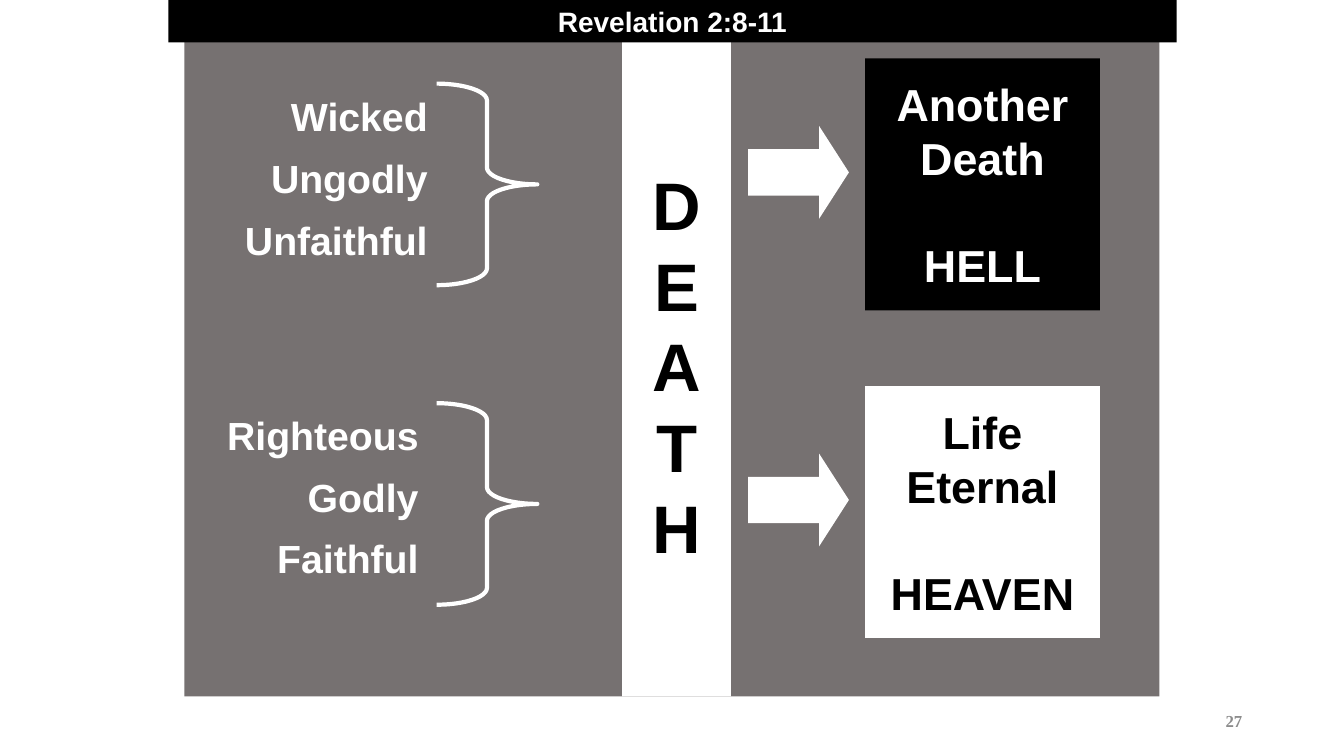
from pptx import Presentation
from pptx.dml.color import RGBColor
from pptx.enum.shapes import MSO_SHAPE
from pptx.enum.text import MSO_ANCHOR, PP_ALIGN
from pptx.util import Inches, Pt

RECTANGLE = MSO_SHAPE.RECTANGLE
BRACE = MSO_SHAPE.RIGHT_BRACE
ARROW = MSO_SHAPE.RIGHT_ARROW
TOP, MIDDLE = MSO_ANCHOR.TOP, MSO_ANCHOR.MIDDLE
CENTER, RIGHT = PP_ALIGN.CENTER, PP_ALIGN.RIGHT
BLACK, WHITE, GRAY, NUMBER_GRAY = "000000", "FFFFFF", "767171", "8C8C8C"


def color(value):
    return RGBColor.from_string(value)


class SlideBuilder:
    font = "Arial"

    def __init__(self, slide):
        self.slide = slide

    def add_shape(self, kind, box, fill=None, line=None, adjustments=()):
        shape = self.slide.shapes.add_shape(kind, *map(Inches, box))
        shape.shadow.inherit = False
        if fill:
            shape.fill.solid()
            shape.fill.fore_color.rgb = color(fill)
        else:
            shape.fill.background()
        if line:
            shape.line.color.rgb = color(line)
            shape.line.width = Pt(3)
        else:
            shape.line.fill.background()
        for index, adjustment in enumerate(adjustments):
            shape.adjustments[index] = adjustment
        return shape

    def add_text_box(self, box):
        return self.slide.shapes.add_textbox(*map(Inches, box))

    def add_lines(self, shape, lines, size, ink, align=CENTER, anchor=MIDDLE,
                  wrap=True, font=None, spacing=None, gaps=None):
        frame = shape.text_frame
        frame.word_wrap = wrap
        frame.vertical_anchor = anchor
        for index, line in enumerate(lines):
            paragraph = frame.add_paragraph() if index else frame.paragraphs[0]
            paragraph.alignment = align
            if spacing:
                paragraph.line_spacing = spacing
            if gaps:
                paragraph.space_before = Pt(gaps[index])
            run = paragraph.add_run()
            run.text = line
            run.font.name = font or self.font
            run.font.size = Pt(size)
            run.font.bold = True
            run.font.color.rgb = color(ink)

    def add_people(self, left, top, words):
        box = self.add_text_box((left, top, 2.17, 1.84))
        self.add_lines(box, words, 28, WHITE, RIGHT, TOP, spacing=0.9, gaps=(0, 14, 14))

    def add_destiny(self, top, lines, fill, ink):
        box = self.add_shape(RECTANGLE, (8.58, top, 2.33, 2.5), fill)
        self.add_lines(box, lines, 32, ink, wrap=False, gaps=(0, 0, 38.4))


def main():
    presentation = Presentation()
    presentation.slide_width = Inches(13.33)
    presentation.slide_height = Inches(7.5)
    slide = presentation.slides.add_slide(presentation.slide_layouts[6])
    builder = SlideBuilder(slide)

    builder.add_shape(RECTANGLE, (1.83, 0.33, 9.67, 6.58), GRAY)
    death = builder.add_shape(RECTANGLE, (6.17, 0.33, 1.08, 6.58), WHITE)
    builder.add_lines(death, "DEATH", 48, BLACK, wrap=False)

    fates = [
        (2.17, 0.92, 0.83, ("Wicked", "Ungodly", "Unfaithful"),
         0.58, ("Another", "Death", "HELL"), BLACK, WHITE),
        (2.08, 4.08, 4, ("Righteous", "Godly", "Faithful"),
         3.83, ("Life", "Eternal", "HEAVEN"), WHITE, BLACK),
    ]
    for left, top, brace_top, words, box_top, lines, fill, ink in fates:
        builder.add_people(left, top, words)
        builder.add_shape(BRACE, (4.33, brace_top, 1, 2), line=WHITE, adjustments=(0.167, 0.5))
        builder.add_destiny(box_top, lines, fill, ink)
        builder.add_shape(ARROW, (7.42, box_top + 0.67, 1, 0.92), WHITE, adjustments=(0.5, 0.321))

    title = builder.add_shape(RECTANGLE, (1.67, 0, 10, 0.42), BLACK)
    builder.add_lines(title, ["Revelation 2:8-11"], 20, WHITE, anchor=TOP)
    number = builder.add_text_box((9.42, 6.95, 3, 0.4))
    builder.add_lines(number, ["27"], 12, NUMBER_GRAY, RIGHT, font="Times New Roman")

    presentation.save("out.pptx")


if __name__ == "__main__":
    main()
